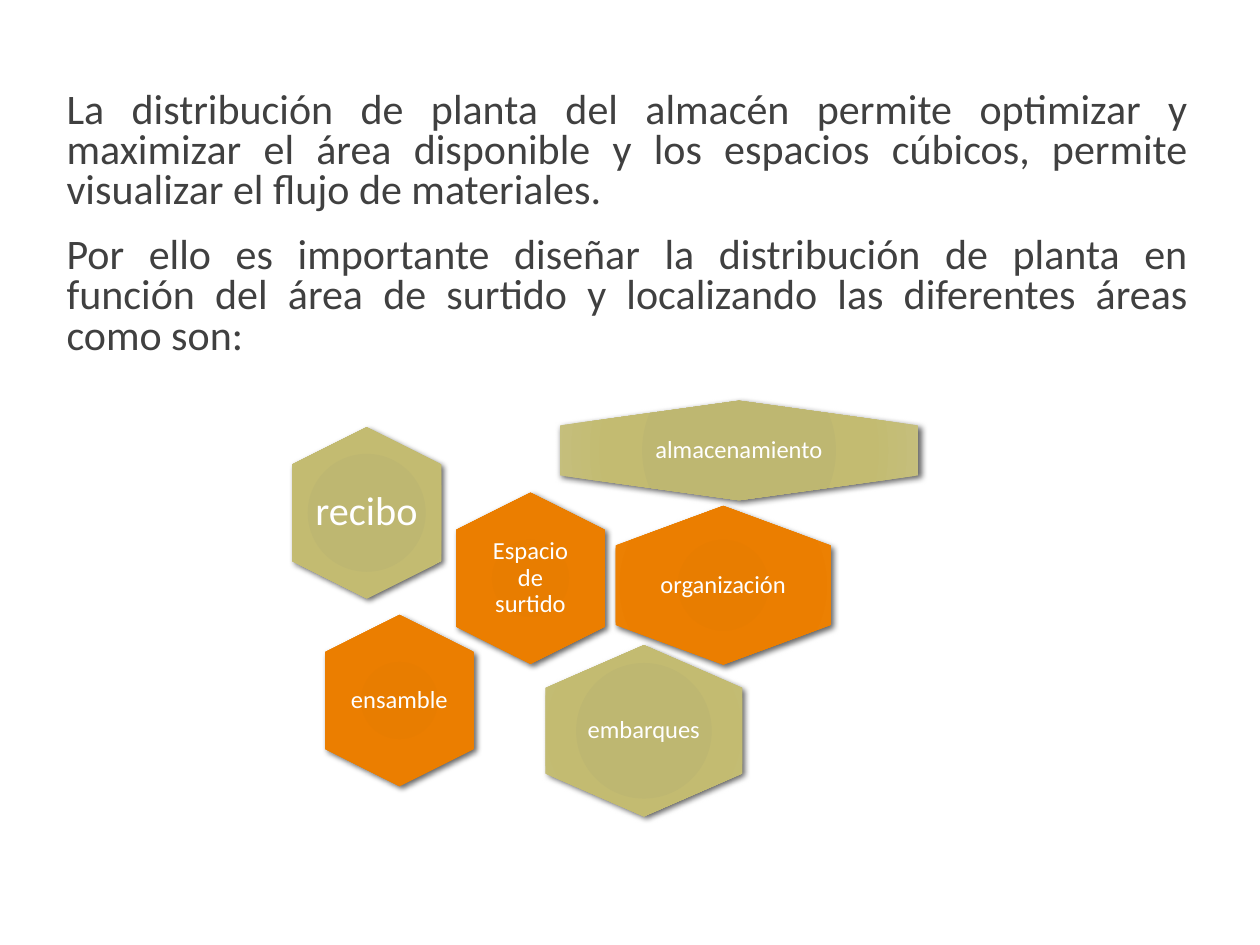
"""Build the warehouse layout slide: two paragraphs above a cluster of hexagons."""
from pptx import Presentation
from pptx.dml.color import RGBColor
from pptx.enum.shapes import MSO_SHAPE as Shape
from pptx.enum.text import MSO_ANCHOR as Anchor, PP_ALIGN as Align
from pptx.oxml import parse_xml
from pptx.oxml.ns import nsdecls, qn
from pptx.util import Inches, Pt

COLORS = {"body": "404040", "label": "FFFFFF", "shadow": "000000"}
GRADIENTS = {
    "green": {0: "BEB76E", 34: "BEB771", 70: "C3BB71", 100: "C5BF7D"},
    "orange": {0: "E57B00", 34: "E87D00", 70: "EB7E00", 100: "EF8407"},
}
BODY = [
    "La distribución de planta del almacén permite optimizar y maximizar el área disponible "
    "y los espacios cúbicos, permite visualizar el flujo de materiales.",
    "Por ello es importante diseñar la distribución de planta en función del área de surtido "
    "y localizando las diferentes áreas como son:",
]
AREAS = [
    ("almacenamiento", "green", (5.47, 2.15, 0.79, 2.85), (1.9, 0.52), 0.06, 14),
    ("recibo", "green", (2.23, 3.48, 1.36, 1.18), (0.9, 0.94), 0, 23),
    ("Espacio de surtido", "orange", (3.53, 4, 1.36, 1.18), (0.81, 0.94), 0.06, 14),
    ("organización", "orange", (5.11, 3.79, 1.26, 1.71), (1.14, 0.84), 0, 14),
    ("embarques", "green", (4.43, 5.02, 1.36, 1.56), (1.04, 0.91), 0.06, 14),
    ("ensamble", "orange", (2.49, 4.97, 1.36, 1.18), (0.81, 0.94), 0, 14),
]


def add_text(shapes, box, texts, margins, size, color, frame_format, paragraph_format):
    frame = shapes.add_textbox(*map(Inches, box)).text_frame
    frame.word_wrap = True
    for side, margin in zip(("left", "top", "right", "bottom"), margins):
        setattr(frame, f"margin_{side}", Inches(margin))
    for name, value in frame_format.items():
        setattr(frame, name, value)
    for index, text in enumerate(texts):
        paragraph = frame.add_paragraph() if index else frame.paragraphs[0]
        paragraph.text = text
        for name, value in paragraph_format.items():
            setattr(paragraph, name, value)
        if index:
            paragraph.space_before = Pt(12)
        font = paragraph.font
        font.name, font.size = "Calibri", Pt(size)
        font.color.rgb = RGBColor.from_string(COLORS[color])


def style_hexagon(hexagon, stops):
    hexagon.line.fill.background()
    hexagon.shadow.inherit = False
    properties = hexagon._element.spPr
    stop_xml = "".join(
        f'<a:gs pos="{position * 1000}"><a:srgbClr val="{color}"/></a:gs>'
        for position, color in stops.items()
    )
    edges = " ".join(f'{edge}="100000"' for edge in "ltrb")
    properties.find(qn("a:prstGeom")).addnext(parse_xml(
        f'<a:gradFill {nsdecls("a")} rotWithShape="1"><a:gsLst>{stop_xml}</a:gsLst>'
        f'<a:path path="circle"><a:fillToRect {edges}/></a:path></a:gradFill>'
    ))
    properties.find(qn("a:effectLst")).append(parse_xml(
        f'<a:outerShdw {nsdecls("a")} blurRad="{Pt(3.5)}" dist="{Pt(2)}" dir="2700000" '
        f'algn="br" rotWithShape="0"><a:srgbClr val="{COLORS["shadow"]}">'
        '<a:alpha val="60000"/></a:srgbClr></a:outerShdw>'
    ))


presentation = Presentation()
presentation.slide_width, presentation.slide_height = Inches(10), Inches(7.5)
slide = presentation.slides.add_slide(presentation.slide_layouts[6])

add_text(
    slide.shapes, (0.43, 0.68, 9, 2.44), BODY, (0.1, 0.05, 0, 0.05), 24, "body", {},
    {"alignment": Align.JUSTIFY, "line_spacing": 0.8, "space_after": Pt(2)},
)

cluster = slide.shapes.add_group_shape().shapes
for label, palette, box, (width, height), margin, size in AREAS:
    hexagon = cluster.add_shape(Shape.HEXAGON, *map(Inches, box))
    hexagon.rotation = 90
    hexagon.adjustments[0] = 0.25
    style_hexagon(hexagon, GRADIENTS[palette])
    left = box[0] + (box[2] - width) / 2
    top = box[1] + (box[3] - height) / 2
    add_text(
        cluster, (left, top, width, height), [label], [margin] * 4, size, "label",
        {"vertical_anchor": Anchor.MIDDLE},
        {"alignment": Align.CENTER, "line_spacing": 0.9},
    )

presentation.save("out.pptx")
